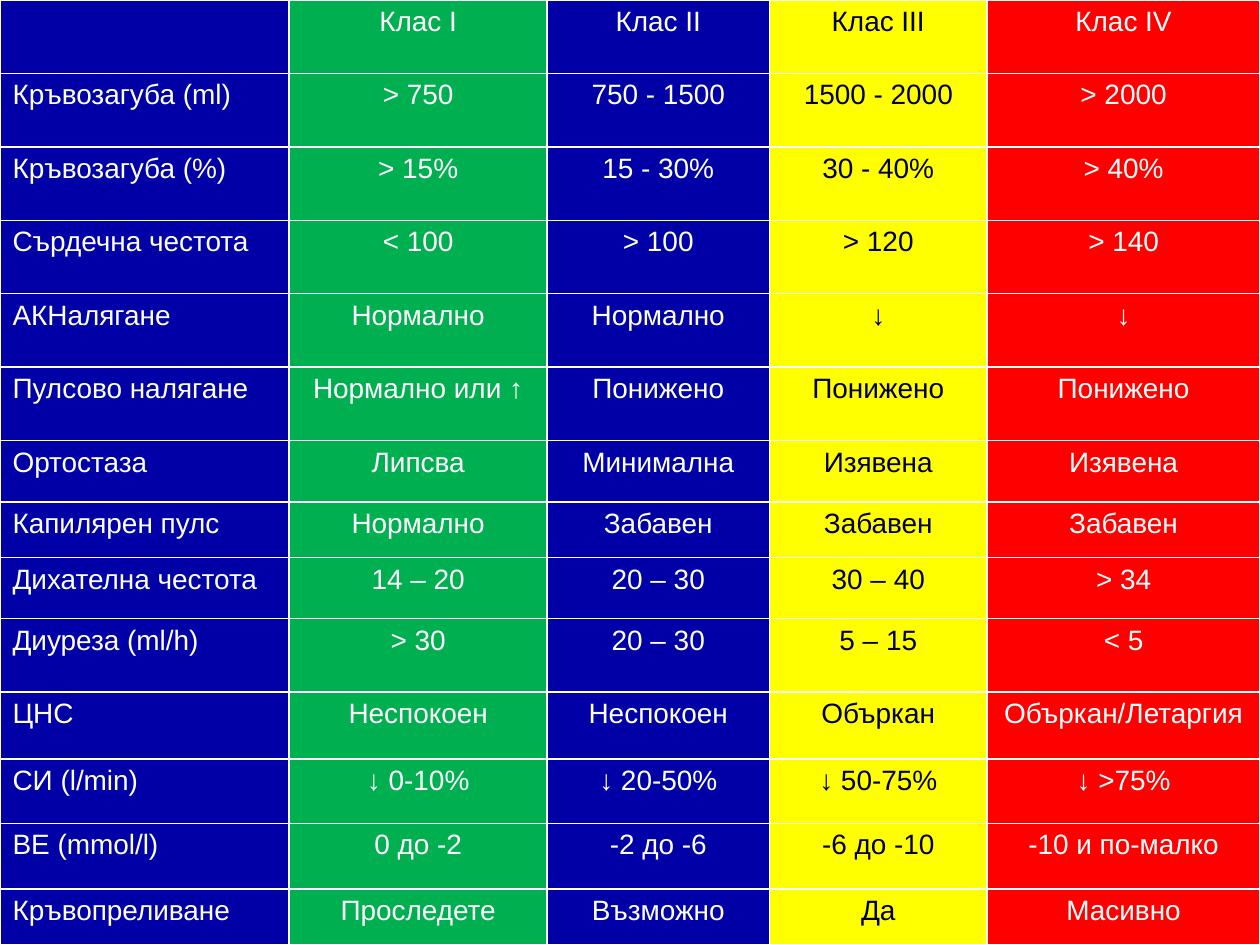
from dataclasses import dataclass

from lxml import etree
from pptx import Presentation
from pptx.dml.color import RGBColor
from pptx.enum.text import PP_ALIGN
from pptx.oxml.ns import qn
from pptx.util import Cm, Pt

LEFT, MID = PP_ALIGN.LEFT, PP_ALIGN.CENTER


@dataclass(frozen=True)
class Theme:
    """Colours, font and sizes of the slide."""
    back: str = "000033"
    blue: str = "0000A6"
    green: str = "00B050"
    gold: str = "FFFF00"
    red: str = "FF0000"
    light: str = "FFFFFF"
    dark: str = "000033"
    font: str = "Arial"
    size: int = 16
    rule: int = 1


THEME = Theme()

COLS = [
    (5.83, THEME.blue, THEME.light, LEFT),
    (5.2, THEME.green, THEME.light, MID),
    (4.48, THEME.blue, THEME.light, MID),
    (4.39, THEME.gold, THEME.dark, MID),
    (5.5, THEME.red, THEME.light, MID),
]

ROWS = [
    (1.48, "", "Клас I", "Клас II", "Клас III", "Клас IV"),
    (1.48, "Кръвозагуба (ml)", "> 750", "750 - 1500", "1500 - 2000", "> 2000"),
    (1.48, "Кръвозагуба (%)", "> 15%", "15 - 30%", "30 - 40%", "> 40%"),
    (1.48, "Сърдечна честота", "< 100", "> 100", "> 120", "> 140"),
    (1.48, "АКНалягане", "Нормално", "Нормално", "↓", "↓"),
    (1.48, "Пулсово налягане", "Нормално или ↑", "Понижено", "Понижено", "Понижено"),
    (1.24, "Ортостаза", "Липсва", "Минимална", "Изявена", "Изявена"),
    (1.12, "Капилярен пулс", "Нормално", "Забавен", "Забавен", "Забавен"),
    (1.23, "Дихателна честота", "14 – 20", "20 – 30", "30 – 40", "> 34"),
    (1.48, "Диуреза (ml/h)", "> 30", "20 – 30", "5 – 15", "< 5"),
    (1.35, "ЦНС", "Неспокоен", "Неспокоен", "Объркан", "Объркан/Летаргия"),
    (1.3, "СИ (l/min)", "↓ 0-10%", "↓ 20-50%", "↓ 50-75%", "↓ >75%"),
    (1.32, "BE (mmol/l)", "0 до -2", "-2 до -6", "-6 до -10", "-10 и по-малко"),
    (1.13, "Кръвопреливане", "Проследете", "Възможно", "Да", "Масивно"),
]


def paint(fill, tint):
    """Give a fill one solid colour."""
    fill.solid()
    fill.fore_color.rgb = RGBColor.from_string(tint)


def write(frame, text, *, tint, align, size=THEME.size, font=THEME.font):
    """Put formatted text in a text frame."""
    para = frame.paragraphs[0]
    para.alignment = align
    if text:
        run = para.add_run()
        run.text = text
        run.font.name = font
        run.font.size = Pt(size)
        run.font.color.rgb = RGBColor.from_string(tint)


def frame_cell(cell, tint=THEME.light, width=THEME.rule):
    """Draw a line on all four sides of a cell."""
    props = cell._tc.get_or_add_tcPr()
    for spot, side in enumerate(("lnL", "lnR", "lnT", "lnB")):
        line = etree.Element(qn(f"a:{side}"), w=str(Pt(width)))
        fill = etree.SubElement(line, qn("a:solidFill"))
        etree.SubElement(fill, qn("a:srgbClr"), val=tint)
        props.insert(spot, line)


def add_grid(slide, wide, high):
    """Add the table of blood loss classes."""
    grid = slide.shapes.add_table(len(ROWS), len(COLS), 0, 0, wide, high).table
    for col, (width, *_) in zip(grid.columns, COLS):
        col.width = Cm(width)
    for row, (height, *texts) in zip(grid.rows, ROWS):
        row.height = Cm(height)
        for cell, text, (_, fill, tint, align) in zip(row.cells, texts, COLS):
            paint(cell.fill, fill)
            frame_cell(cell)
            write(cell.text_frame, text, tint=tint, align=align)


def main():
    """Build and save the slide."""
    deck = Presentation()
    deck.slide_width, deck.slide_height = Cm(25.4), Cm(19.05)
    slide = deck.slides.add_slide(deck.slide_layouts[6])
    paint(slide.background.fill, THEME.back)
    add_grid(slide, deck.slide_width, deck.slide_height)
    deck.save("out.pptx")


if __name__ == "__main__":
    main()
